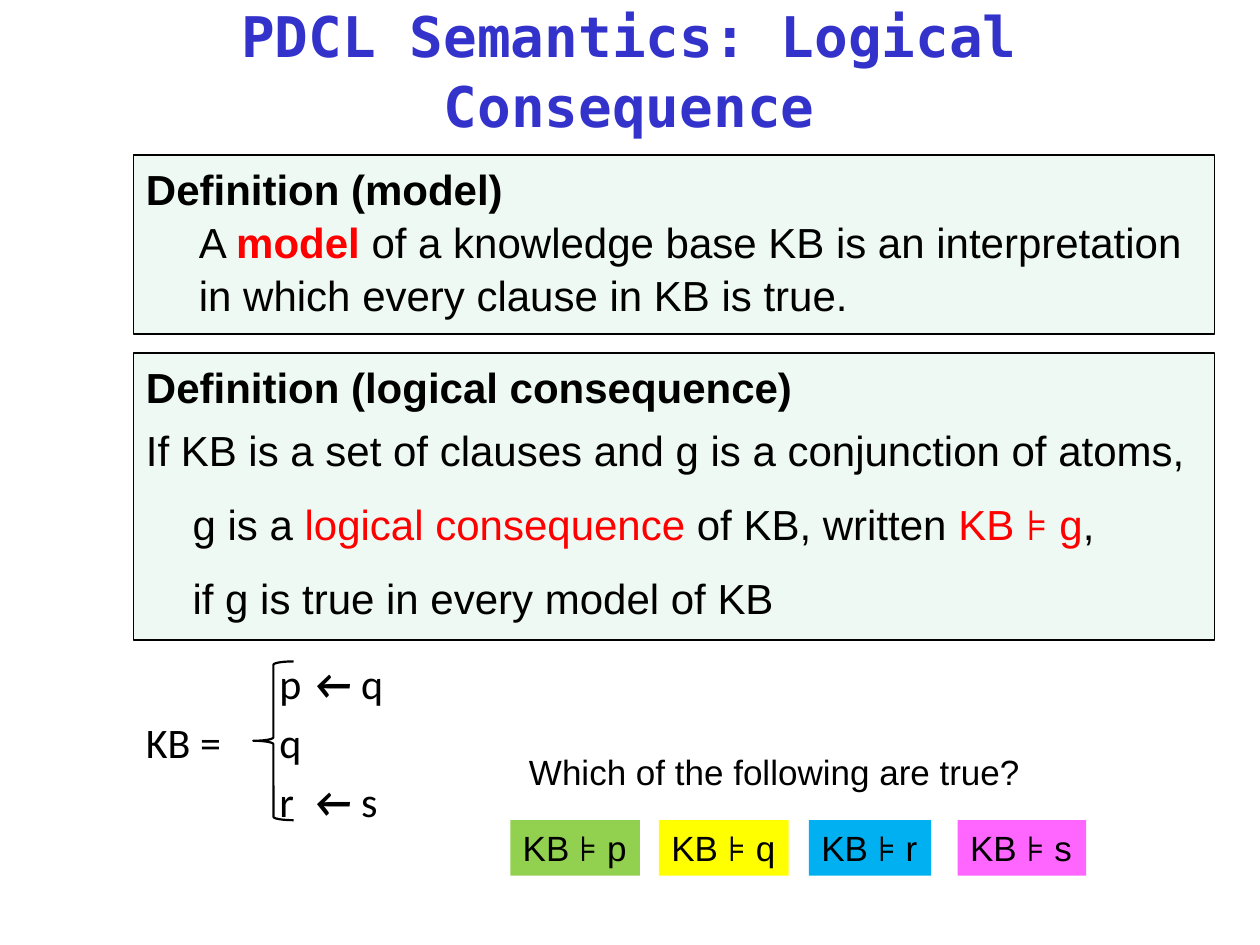
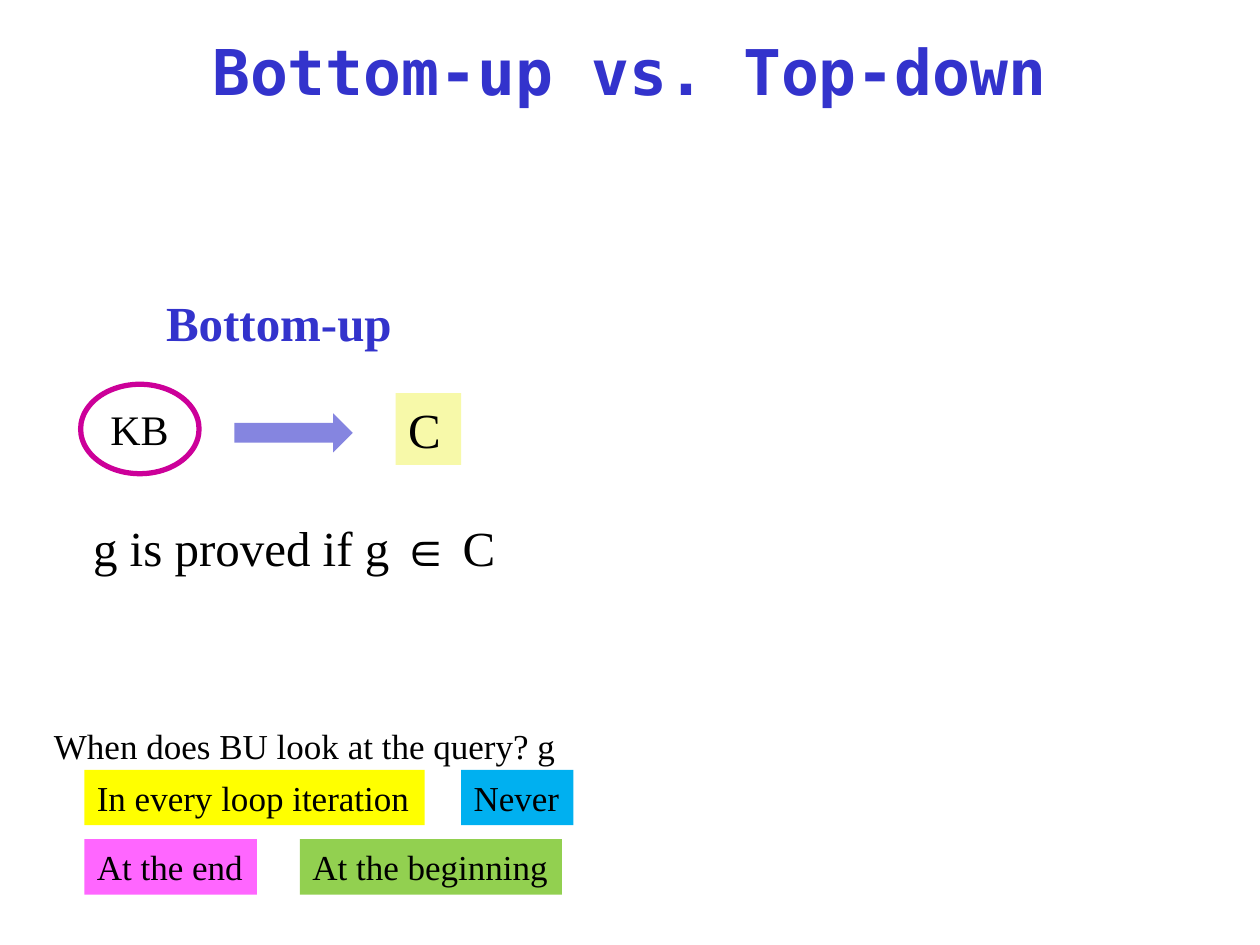
from pptx import Presentation
from pptx.dml.color import RGBColor
from pptx.enum.shapes import MSO_SHAPE
from pptx.enum.text import MSO_ANCHOR, MSO_AUTO_SIZE, PP_ALIGN
from pptx.util import Inches, Pt
from lxml import etree

RECT, OVAL = MSO_SHAPE.RECTANGLE, MSO_SHAPE.OVAL
BRACE, ARROW = MSO_SHAPE.LEFT_BRACE, MSO_SHAPE.RIGHT_ARROW
TOP, MIDDLE = MSO_ANCHOR.TOP, MSO_ANCHOR.MIDDLE
FIT, FIXED = MSO_AUTO_SIZE.SHAPE_TO_FIT_TEXT, MSO_AUTO_SIZE.NONE
LEFT, CENTER = PP_ALIGN.LEFT, PP_ALIGN.CENTER

COLORS = {
    "title": "3333CC", "text": "000000", "key": "FF0000", "panel": "EEF9F4",
    "green": "92D050", "yellow": "FFFF00", "blue": "00B0F0", "pink": "FF66FF",
    "ring": "CC0099", "cream": "F7F9A9", "arrow": "8585E0",
}
ARIAL, SERIF = "Arial", "Times New Roman"
BOLD = {"bold": True}
KEY = {"color": "key"}
BOLD_ITALIC = {"bold": True, "italic": True}
COLS, ROWS = 100, 75
A_NS = "http://schemas.openxmlformats.org/drawingml/2006/main"


def rgb(name):
    return RGBColor.from_string(COLORS[name])


class Deck:
    """Holds the style and the current slide; places things in grid cells."""

    def __init__(self):
        self.prs = Presentation()
        self.prs.slide_width, self.prs.slide_height = Inches(10), Inches(7.5)
        self.cell_w = self.prs.slide_width / COLS
        self.cell_h = self.prs.slide_height / ROWS

    def box(self, x, y, w, h):
        return (round(x * self.cell_w), round(y * self.cell_h),
                round(w * self.cell_w), round(h * self.cell_h))

    def slide(self, title, size):
        self.s = self.prs.slides.add_slide(self.prs.slide_layouts[5])
        sp = self.s.shapes.title
        sp.left, sp.top, sp.width, sp.height = self.box(3.3, 1.7, 93.3, 7.5)
        self.fill_text(sp, [([(title, BOLD)], {"alignment": CENTER, "line_spacing": 1.05})],
                       "DejaVu Sans Mono", size, "title", anchor=MIDDLE, auto_size=FIXED)

    def fill_text(self, sp, paras, font, size, color="text", tabs=(), anchor=TOP, **frame):
        """Each paragraph is (runs, format); each run is (text, format)."""
        tf = sp.text_frame
        for name, value in {"word_wrap": True, "vertical_anchor": anchor, **frame}.items():
            setattr(tf, name, value)
        for i, (runs, fmt) in enumerate(paras):
            p = tf.add_paragraph() if i else tf.paragraphs[0]
            pPr = p._p.get_or_add_pPr()
            if "indent" in fmt:
                pPr.set("marL", str(round(fmt["indent"] * self.cell_w)))
            if tabs:
                tab_list = etree.SubElement(pPr, f"{{{A_NS}}}tabLst")
                for tab in tabs:
                    etree.SubElement(tab_list, f"{{{A_NS}}}tab",
                                     pos=str(round(tab * self.cell_w)), algn="l")
            for name, value in {"alignment": LEFT, **fmt}.items():
                if name != "indent":
                    setattr(p, name, value)
            for text, run_fmt in runs:
                r = p.add_run()
                r.text = text
                style = {"name": font, "size": Pt(size), "bold": False, "italic": False,
                         "color": color, **run_fmt}
                r.font.color.rgb = rgb(style.pop("color"))
                for name, value in style.items():
                    setattr(r.font, name, value)

    def text(self, at, paras, font, size, color="text", **options):
        sp = self.s.shapes.add_textbox(*self.box(*at))
        self.fill_text(sp, paras, font, size, color, **options)

    def line(self, at, text, font, size, color="text", **run_fmt):
        self.text(at, [([(text, run_fmt)], {})], font, size, color, auto_size=FIT)

    def shape(self, kind, at, fill=None, line=None, width=1):
        sp = self.s.shapes.add_shape(kind, *self.box(*at))
        sp.shadow.inherit = False
        if fill:
            sp.fill.solid()
            sp.fill.fore_color.rgb = rgb(fill)
        else:
            sp.fill.background()
        if line:
            sp.line.color.rgb = rgb(line)
            sp.line.width = Pt(width)
        else:
            sp.line.fill.background()
        return sp

    def label(self, at, text, font, size, kind=RECT, **look):
        sp = self.shape(kind, at, **look)
        self.fill_text(sp, [([(text, {})], {})], font, size, word_wrap=False, auto_size=FIT)

    def panel(self, y, h, paras):
        sp = self.shape(RECT, (10.6, y, 85.8, h), "panel", "text")
        self.fill_text(sp, [(runs, {"line_spacing": 1.05, **fmt}) for runs, fmt in paras],
                       ARIAL, 24)


def consequence_slide(deck):
    deck.slide("PDCL Semantics: Logical Consequence", 32)

    # Definitions
    spaced = {"space_before": Pt(6), "space_after": Pt(6)}
    inner = {**spaced, "indent": 3.7}
    deck.panel(28, 22.8, [
        ([("Definition (logical consequence)", BOLD)], {}),
        ([("If KB is a set of clauses and g is a conjunction of atoms,", {})], spaced),
        ([("g is a ", {}), ("logical consequence ", KEY), ("of KB, written ", {}),
          ("KB ⊧ g", KEY), (",", {})], inner),
        ([("if g is true in every model of KB", {})], inner),
    ])
    deck.panel(12.3, 14.2, [
        ([("Definition (model)", BOLD)], {}),
        ([("A ", {}), ("model ", {**BOLD, **KEY}),
          ("of a knowledge base KB is an interpretation in which every clause in KB is true.",
           {})], {"indent": 4.2}),
    ])

    # Knowledge base
    arrow = ("←", BOLD_ITALIC)
    clauses = [[("\tp\t", {}), arrow, (" q", {})],
               [("KB =\tq", {})],
               [("\tr\t", {}), arrow, (" s", {})]]
    deck.text((10.6, 51.7, 88.1, 15.7),
              [(runs, {"space_before": Pt(4.8 if i else 0)}) for i, runs in enumerate(clauses)],
              "Calibri", 24, tabs=(10.6, 13.3))
    deck.shape(BRACE, (20.1, 52.5, 3.2, 12.6), line="text", width=1.25)

    # Question and answers
    deck.line((41, 59.1, 43, 4.4), "Which of the following are true?", ARIAL, 20)
    for atom, x, w, fill in (("p", 40.5, 10.3, "green"), ("q", 52.3, 10.3, "yellow"),
                             ("r", 64.2, 9.7, "blue"), ("s", 76, 10.2, "pink")):
        deck.label((x, 65.1, w, 4.4), f"KB ⊧ {atom}", ARIAL, 20, fill=fill)


def comparison_slide(deck):
    deck.slide("Bottom-up vs. Top-down", 36)

    # Bottom-up proof
    deck.line((12.2, 22.7, 21, 5.7), "Bottom-up", SERIF, 28, "title", **BOLD)
    deck.label((6.4, 30.5, 9.4, 7.1), "KB", SERIF, 24, OVAL, line="ring", width=3)
    deck.shape(ARROW, (18.6, 32.8, 9.4, 3.1), "arrow")
    deck.label((31.4, 31.2, 5.2, 5.7), "C", SERIF, 28, fill="cream")
    deck.line((6.4, 40.6, 45.9, 5.7), "g is proved if g ∈ C", SERIF, 28)

    # Question and answers
    deck.line((3.3, 57, 46, 4.4), "When does BU look at the query? g", SERIF, 20)
    for answer, x, y, w, fill in (("In every loop iteration", 6.7, 61.1, 27, "yellow"),
                                  ("Never", 36.6, 61.1, 8.9, "blue"),
                                  ("At the end", 6.7, 66.6, 13.7, "pink"),
                                  ("At the beginning", 23.8, 66.6, 20.8, "green")):
        deck.label((x, y, w, 4.4), answer, SERIF, 20, fill=fill)


def main():
    deck = Deck()
    consequence_slide(deck)
    comparison_slide(deck)
    deck.prs.save("out.pptx")


if __name__ == "__main__":
    main()
